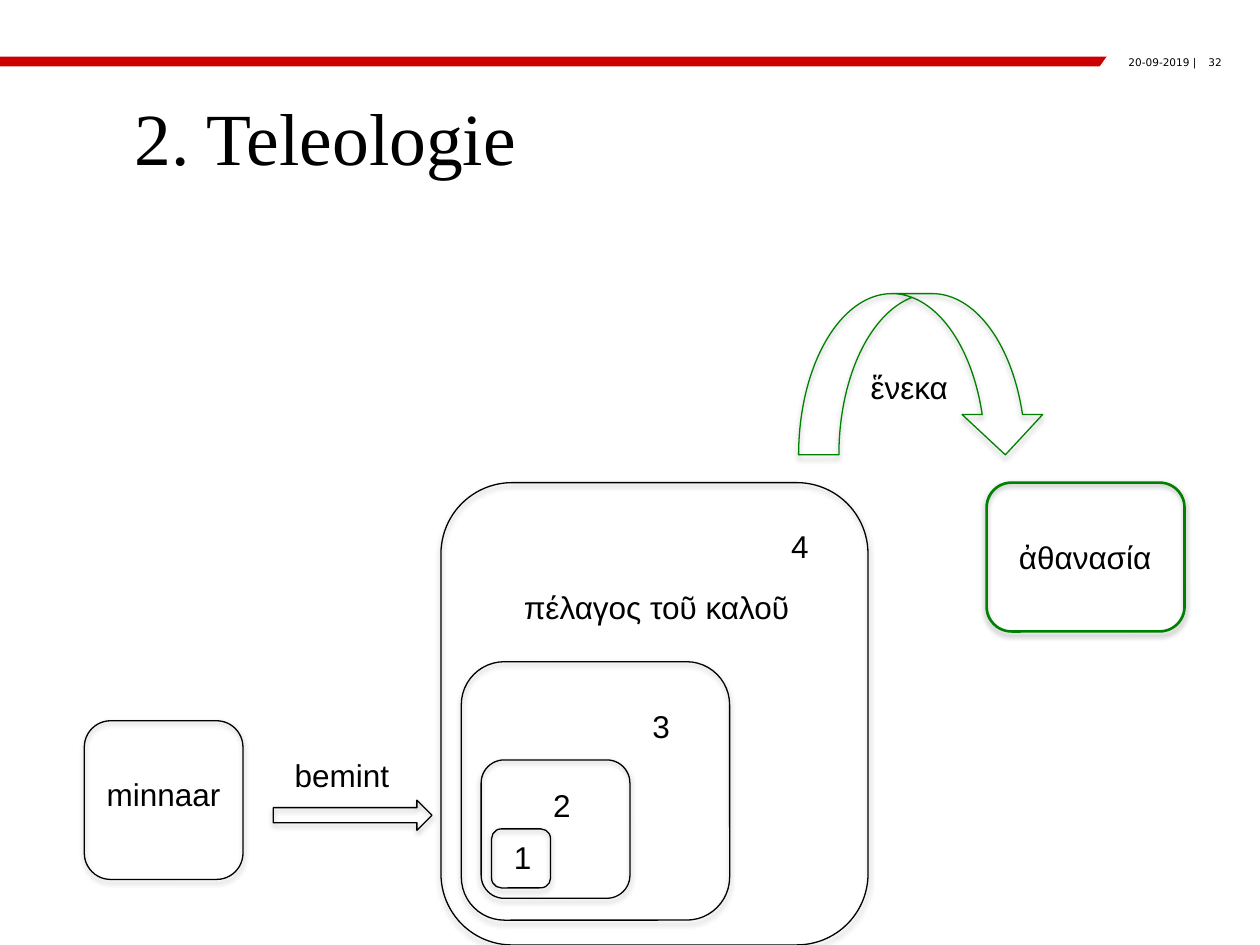
from dataclasses import dataclass

import pptx
import pptx.dml.color
import pptx.enum.shapes
import pptx.enum.text
import pptx.oxml
import pptx.util

Cm, Pt = pptx.util.Cm, pptx.util.Pt
RGB = pptx.dml.color.RGBColor.from_string
MSO = pptx.enum.shapes.MSO_SHAPE
ALIGN = pptx.enum.text.PP_ALIGN
AUTO_SIZE = pptx.enum.text.MSO_AUTO_SIZE


@dataclass(frozen=True)
class Theme:
    black: str = "000000"
    white: str = "FFFFFF"
    red: str = "CC0000"
    green: str = "008000"
    title_font: str = "Times New Roman"
    label_font: str = "Arial"
    header_font: str = "DejaVu Sans"
    title_size: float = 42
    label_size: float = 18
    header_size: float = 6


THEME = Theme()

SHADOW = (
    '<a:effectLst xmlns:a="http://schemas.openxmlformats.org/drawingml/2006/main">'
    '<a:outerShdw blurRad="40000" dist="23000" dir="5400000" rotWithShape="0">'
    '<a:srgbClr val="000000"><a:alpha val="35000"/></a:srgbClr>'
    "</a:outerShdw></a:effectLst>"
)


def format_runs(tf, font, size):
    for p in tf.paragraphs:
        for r in p.runs:
            r.font.name = font
            r.font.size = Pt(size)
            r.font.color.rgb = RGB(THEME.black)


def fill_plain(sp, color):
    sp.shadow.inherit = False
    sp.fill.solid()
    sp.fill.fore_color.rgb = RGB(color)
    sp.line.fill.background()


def add_outline(s, kind, left, top, width, height, color=THEME.black, weight=0.75):
    """Add an unfilled shape with a soft shadow below its line."""
    sp = s.shapes.add_shape(kind, Cm(left), Cm(top), Cm(width), Cm(height))
    sp.fill.background()
    sp.line.color.rgb = RGB(color)
    sp.line.width = Pt(weight)
    sp._element.spPr.append(pptx.oxml.parse_xml(SHADOW))


def add_label(s, text, left, top, width=0.79, wrap=True):
    sp = s.shapes.add_textbox(Cm(left), Cm(top), Cm(width), Cm(1.02))
    tf = sp.text_frame
    tf.word_wrap = wrap
    tf.auto_size = AUTO_SIZE.SHAPE_TO_FIT_TEXT
    tf.text = text
    format_runs(tf, THEME.label_font, THEME.label_size)


def add_header_text(s, text, left, width, align=ALIGN.RIGHT, wrap=False):
    sp = s.shapes.add_textbox(Cm(left), Cm(1.12), Cm(width), Cm(0.38))
    tf = sp.text_frame
    tf.margin_left = tf.margin_right = tf.margin_top = tf.margin_bottom = 0
    tf.word_wrap = wrap
    tf.text = text
    tf.paragraphs[0].alignment = align
    format_runs(tf, THEME.header_font, THEME.header_size)


def add_header(s):
    bar = s.shapes.add_shape(MSO.RECTANGLE, 0, Cm(1.14), Cm(25.4), Cm(0.2))
    fill_plain(bar, THEME.red)
    corners = [(22.35, 1.09), (25.4, 1.09), (25.4, 1.37), (22.15, 1.37)]
    start, *others = [(Cm(x), Cm(y)) for x, y in corners]
    outline = s.shapes.build_freeform(*start)
    outline.add_line_segments(others, close=True)
    fill_plain(outline.convert_to_shape(), THEME.white)
    add_header_text(s, "32", 24.1, 0.53, wrap=True)
    add_header_text(s, "|", 24.05, 0.15, ALIGN.LEFT)
    add_header_text(s, "20-09-2019", 21.87, 2.11)


def set_title(s, text):
    sp = s.shapes.title
    sp.left, sp.top, sp.width, sp.height = Cm(0), Cm(1.63), Cm(25.4), Cm(2.21)
    tf = sp.text_frame
    tf.margin_left, tf.margin_right = Cm(2.72), Cm(0.76)
    tf.vertical_anchor = pptx.enum.text.MSO_ANCHOR.MIDDLE
    tf.auto_size = AUTO_SIZE.NONE
    tf.text = text
    tf.paragraphs[0].alignment = ALIGN.LEFT
    format_runs(tf, THEME.title_font, THEME.title_size)


def add_lover(s):
    add_outline(s, MSO.ROUNDED_RECTANGLE, 1.7, 14.53, 3.2, 3.2)
    add_label(s, "minnaar", 1.9, 15.49, 3.2)
    add_outline(s, MSO.RIGHT_ARROW, 5.51, 16.13, 3.2, 0.61)
    add_label(s, "bemint", 5.69, 15.11, 2.44, wrap=False)


def add_stages(s):
    """Add the nested boxes, innermost first, each with its number."""
    stages = [
        ((9.91, 16.71, 1.19, 1.19), (10.11, 16.76)),
        ((9.7, 15.32, 3, 2.79), (10.9, 15.72)),
        ((9.3, 13.34, 5.41, 5.21), (12.9, 14.12)),
        ((8.89, 9.73, 8.61, 9.32), (15.7, 10.49)),
    ]
    for number, (box, label) in enumerate(stages, 1):
        add_outline(s, MSO.ROUNDED_RECTANGLE, *box)
        add_label(s, str(number), *label)
    add_label(s, "πέλαγος τοῦ καλοῦ", 10.31, 11.73, 5.92, wrap=False)


def add_goal(s):
    add_outline(s, MSO.CURVED_DOWN_ARROW, 16.1, 5.92, 4.98, 3.25, THEME.green)
    add_outline(s, MSO.ROUNDED_RECTANGLE, 19.89, 9.73, 3.99, 3, THEME.green, 1.5)
    add_label(s, "ἀθανασία", 20.29, 10.72, 3.2, wrap=False)
    add_label(s, "ἕνεκα", 17.3, 7.29, 2.59)


def main():
    prs = pptx.Presentation()
    prs.slide_width, prs.slide_height = Cm(25.4), Cm(19.05)
    s = prs.slides.add_slide(prs.slide_layouts[5])
    add_header(s)
    set_title(s, "2. Teleologie")
    add_lover(s)
    add_stages(s)
    add_goal(s)
    prs.save("out.pptx")


if __name__ == "__main__":
    main()
